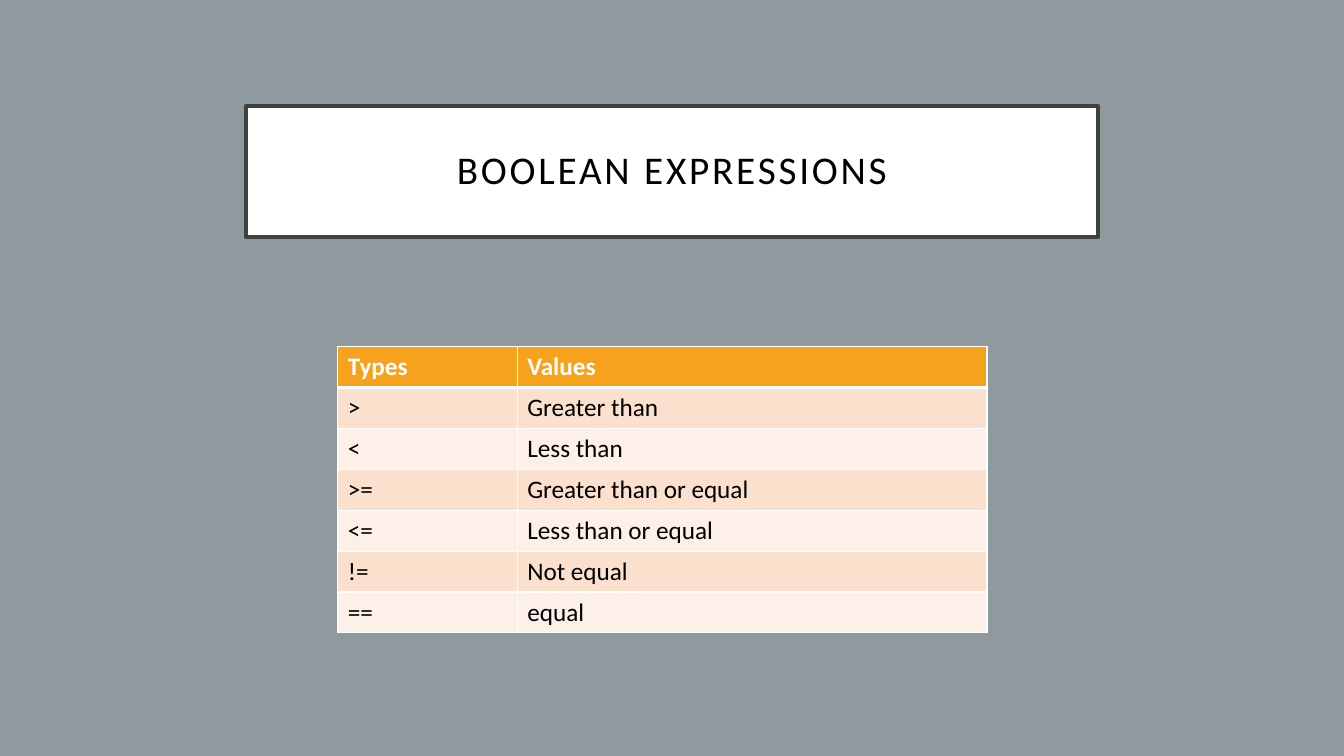
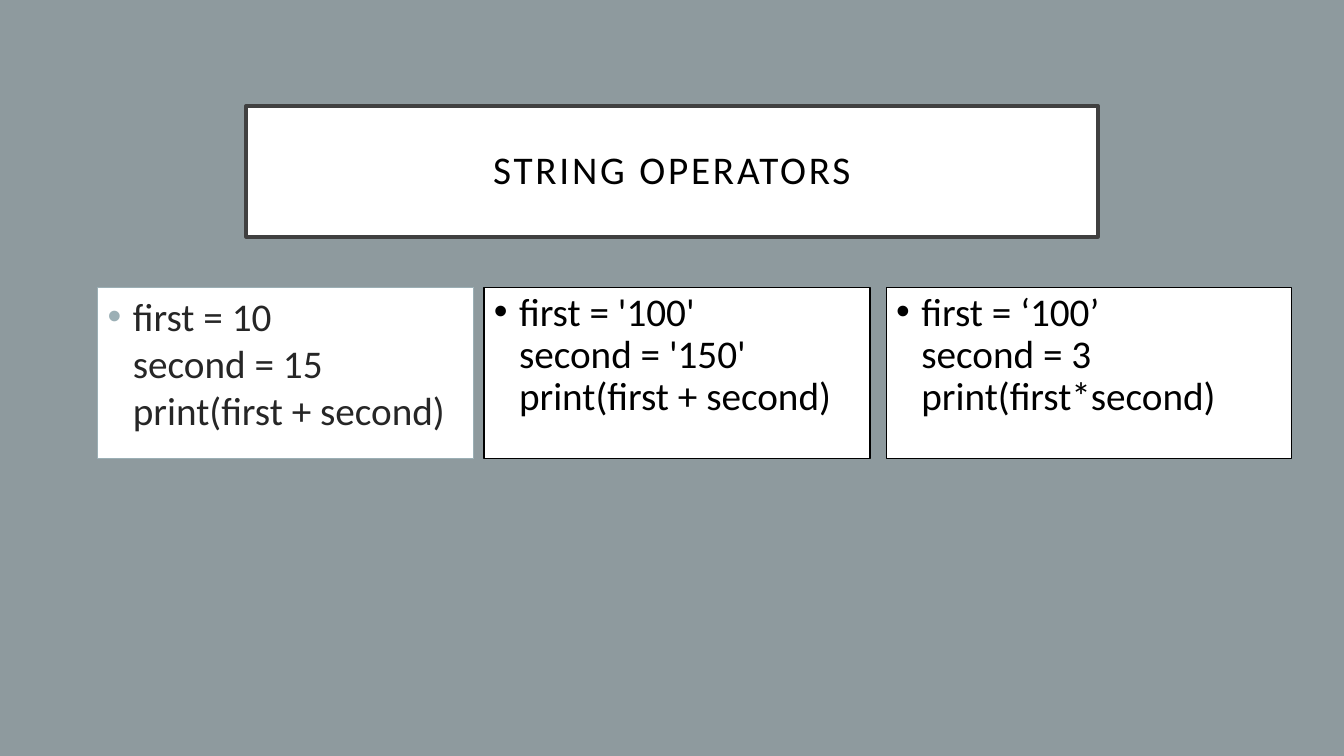
from lxml import etree
from pptx import Presentation
from pptx.dml.color import RGBColor
from pptx.enum.shapes import MSO_SHAPE
from pptx.enum.text import MSO_ANCHOR, PP_ALIGN
from pptx.oxml import parse_xml
from pptx.oxml.ns import nsdecls, qn
from pptx.util import Inches, Pt

# Content
TITLES = ["BOOLEAN EXPRESSIONS", "STRING OPERATORS"]
OPERATORS = [
    ("Types", "Values"),
    (">", "Greater than"),
    ("<", "Less than"),
    (">=", "Greater than or equal"),
    ("<=", "Less than or equal"),
    ("!=", "Not equal"),
    ("==", "equal"),
]
# left, width, line colour, text colour, line spacing, code lines
EXAMPLES = [
    (0.97, 3.73, "mist", "ink", 1.0,
     ["first = 10", "second = 15", "print(first + second)"]),
    (4.8, 3.83, "black", "black", 0.9,
     ["first = '100'", "second = '150'", "print(first + second)"]),
    (8.79, 4.02, "black", "black", 0.9,
     ["first = ‘100’", "second = 3", "print(first*second)"]),
]

# Shared look
COLORS = {
    "back": "8E9A9E", "white": "FFFFFF", "black": "000000", "ink": "262626",
    "frame": "404040", "mist": "9BAFB5",
    "header": "F6A21D", "band_dark": "FBE0CD", "band_light": "FDF0E8",
}
FONT = "Calibri"
TITLE_BOX = (2.44, 1.05, 8.45, 1.3)
EXAMPLE_TOP, EXAMPLE_HEIGHT = 2.85, 1.7
TABLE_BOX = (3.35, 3.44, 6.44, 2.84)
TABLE_COLUMNS = (1.78, 4.66)


def rgb(name):
    return RGBColor.from_string(COLORS[name])


def style_runs(p, size, color, bold=False):
    for r in p.runs:
        for name, value in {"name": FONT, "size": Pt(size), "bold": bold}.items():
            setattr(r.font, name, value)
        r.font.color.rgb = rgb(color)


def add_panel(slide, box, line, width, anchor, inset=None):
    sp = slide.shapes.add_shape(MSO_SHAPE.RECTANGLE, *map(Inches, box))
    sp.shadow.inherit = False
    sp.fill.solid()
    sp.fill.fore_color.rgb = rgb("white")
    sp.line.color.rgb = rgb(line)
    sp.line.width = Pt(width)
    tf = sp.text_frame
    tf.word_wrap = True
    tf.vertical_anchor = anchor
    if inset is not None:
        for side in ("left", "top", "right", "bottom"):
            setattr(tf, f"margin_{side}", Inches(inset))
    return tf.paragraphs[0]


def add_title(slide, text):
    p = add_panel(slide, TITLE_BOX, "frame", 2.5, MSO_ANCHOR.MIDDLE, 0.2)
    p.text = text
    p.alignment = PP_ALIGN.CENTER
    p.line_spacing = 0.9
    style_runs(p, 28, "black")
    for r in p.runs:
        r.font._element.set("spc", "200")


def add_bullet(p, color):
    pPr = p._p.get_or_add_pPr()
    pPr.set("marL", str(Inches(0.25)))
    pPr.set("indent", str(-Inches(0.25)))
    bu_color = etree.SubElement(pPr, qn("a:buClr"))
    etree.SubElement(bu_color, qn("a:srgbClr"), val=COLORS[color])
    etree.SubElement(pPr, qn("a:buFont"), typeface="Arial")
    etree.SubElement(pPr, qn("a:buChar"), char="•")


def add_example(slide, left, width, line, color, spacing, code):
    box = (left, EXAMPLE_TOP, width, EXAMPLE_HEIGHT)
    p = add_panel(slide, box, line, 1, MSO_ANCHOR.TOP)
    p.text = "\v".join(code)
    p.alignment = PP_ALIGN.LEFT
    p.line_spacing = spacing
    p.space_before = Pt(10)
    add_bullet(p, line)
    style_runs(p, 28, color)


def set_borders(cell, widths):
    tcPr = cell._tc.get_or_add_tcPr()
    for side, width in widths.items():
        tcPr.append(parse_xml(
            f'<a:ln{side} {nsdecls("a")} w="{Pt(width)}"><a:solidFill>'
            f'<a:srgbClr val="{COLORS["white"]}"/></a:solidFill></a:ln{side}>'))


def add_operator_table(slide):
    frame = slide.shapes.add_table(
        len(OPERATORS), len(TABLE_COLUMNS), *map(Inches, TABLE_BOX))
    table = frame.table
    table.horz_banding = False
    for column, width in zip(table.columns, TABLE_COLUMNS):
        column.width = Inches(width)
    for i, row in enumerate(OPERATORS):
        header = i == 0
        fill = "header" if header else ("band_light", "band_dark")[i % 2]
        # The rule under the header is heavier than the others
        borders = {"L": 1, "R": 1, "T": 3 if i == 1 else 1, "B": 3 if header else 1}
        for j, text in enumerate(row):
            cell = table.cell(i, j)
            cell.text = text
            style_runs(cell.text_frame.paragraphs[0], 18,
                       "white" if header else "black", header)
            set_borders(cell, borders)
            cell.fill.solid()
            cell.fill.fore_color.rgb = rgb(fill)


def main():
    prs = Presentation()
    prs.slide_width, prs.slide_height = Inches(13.33), Inches(7.5)
    background = prs.slide_master.background.fill
    background.solid()
    background.fore_color.rgb = rgb("back")

    slides = []
    for title in TITLES:
        slide = prs.slides.add_slide(prs.slide_layouts[6])
        add_title(slide, title)
        slides.append(slide)

    # Slide 1: comparison operators
    add_operator_table(slides[0])

    # Slide 2: code examples
    for example in EXAMPLES:
        add_example(slides[1], *example)

    prs.save("out.pptx")


if __name__ == "__main__":
    main()
